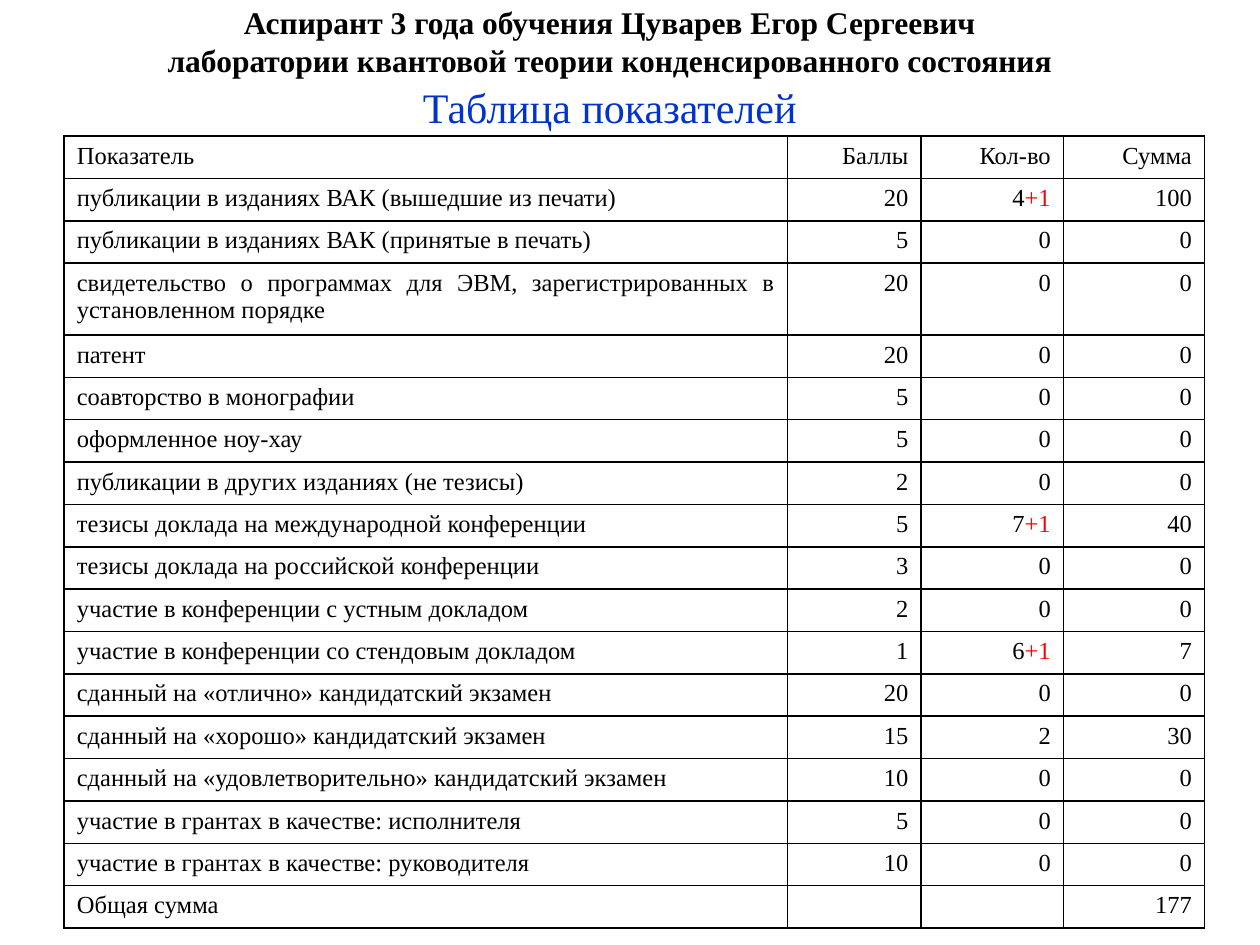
from lxml import etree
from pptx import Presentation
from pptx.dml.color import RGBColor
from pptx.enum.text import MSO_ANCHOR, PP_ALIGN
from pptx.oxml.ns import qn
from pptx.util import Inches, Pt

CENTER, RIGHT, JUSTIFY = PP_ALIGN.CENTER, PP_ALIGN.RIGHT, PP_ALIGN.JUSTIFY
MIDDLE = MSO_ANCHOR.MIDDLE
TITLE_ONLY = 5

FONT = "Times New Roman"
BLACK, BLUE, RED = "000000", "0033CC", "FF0000"
TABLE_SIZE = 14

COLUMN_WIDTHS = [5.74, 1.06, 1.13, 1.12]
TABLE_HEIGHT = 6.29
TALL_ROW, TALL_HEIGHT = 3, 0.57

ROWS = [
    ("Показатель", "Баллы", "Кол-во", "Сумма"),
    ("публикации в изданиях ВАК (вышедшие из печати)", "20", "4+1", "100"),
    ("публикации в изданиях ВАК (принятые в печать)", "5", "0", "0"),
    ("свидетельство о программах для ЭВМ, зарегистрированных в установленном порядке",
     "20", "0", "0"),
    ("патент", "20", "0", "0"),
    ("соавторство в монографии", "5", "0", "0"),
    ("оформленное ноу-хау", "5", "0", "0"),
    ("публикации в других изданиях (не тезисы)", "2", "0", "0"),
    ("тезисы доклада на международной конференции", "5", "7+1", "40"),
    ("тезисы доклада на российской конференции", "3", "0", "0"),
    ("участие в конференции с устным докладом", "2", "0", "0"),
    ("участие в конференции со стендовым докладом", "1", "6+1", "7"),
    ("сданный на «отлично» кандидатский экзамен", "20", "0", "0"),
    ("сданный на «хорошо» кандидатский экзамен", "15", "2", "30"),
    ("сданный на «удовлетворительно» кандидатский экзамен", "10", "0", "0"),
    ("участие в грантах в качестве: исполнителя", "5", "0", "0"),
    ("участие в грантах в качестве: руководителя", "10", "0", "0"),
    ("Общая сумма", "", "", "177"),
]


def color(value):
    return RGBColor.from_string(value)


def add_text(paragraph, text, size, fill=BLACK, bold=False, align=CENTER):
    """Append formatted runs to the paragraph, one for each line of the text."""
    paragraph.alignment = align
    for index, line in enumerate(text.split("\n")):
        if index:
            paragraph.add_line_break()
        run = paragraph.add_run()
        run.text = line
        run.font.name = FONT
        run.font.size = Pt(size)
        run.font.bold = bold
        run.font.color.rgb = color(fill)


def add_title(slide):
    title = slide.shapes.title
    title.left, title.top = Inches(0.59), Inches(-0.03)
    title.width, title.height = Inches(8.5), Inches(0.71)
    frame = title.text_frame
    frame.word_wrap = True
    frame.vertical_anchor = MIDDLE
    paragraph = frame.paragraphs[0]
    paragraph.line_spacing = 1.0
    add_text(
        paragraph,
        "Аспирант 3 года обучения Цуварев Егор Сергеевич\n"
        "лаборатории квантовой теории конденсированного состояния",
        size=18, bold=True)


def add_subtitle(slide):
    box = slide.shapes.add_textbox(Inches(1.34), Inches(0.6), Inches(7), Inches(0.47))
    box.text_frame.word_wrap = True
    paragraph = box.text_frame.paragraphs[0]
    paragraph.space_before = Pt(2)
    add_text(paragraph, "Таблица показателей", size=24, fill=BLUE)


def set_borders(cell):
    properties = cell._tc.get_or_add_tcPr()
    for side in ("a:lnL", "a:lnR", "a:lnT", "a:lnB"):
        line = etree.SubElement(properties, qn(side), w=str(Pt(1)))
        fill = etree.SubElement(line, qn("a:solidFill"))
        etree.SubElement(fill, qn("a:srgbClr"), val=BLACK)


def fill_cell(cell, text, align):
    """Write the cell, with any part from a plus sign onwards in red."""
    set_borders(cell)
    cell.fill.background()
    cell.margin_left = cell.margin_right = Inches(0.1)
    cell.margin_top = cell.margin_bottom = Inches(0.05)
    paragraph = cell.text_frame.paragraphs[0]
    if not text:
        # The end mark sets the height of an empty cell.
        etree.SubElement(paragraph._p, qn("a:endParaRPr"), sz=str(TABLE_SIZE * 100))
        return
    count, plus, extra = text.partition("+")
    add_text(paragraph, count, size=TABLE_SIZE, align=align)
    if plus:
        add_text(paragraph, plus + extra, size=TABLE_SIZE, fill=RED, align=align)


def add_score_table(slide):
    table = slide.shapes.add_table(
        len(ROWS), len(COLUMN_WIDTHS), Inches(0.51), Inches(1.08),
        Inches(sum(COLUMN_WIDTHS)), Inches(TABLE_HEIGHT)).table
    table.first_row = table.horz_banding = False
    for column, width in zip(table.columns, COLUMN_WIDTHS):
        column.width = Inches(width)
    row_height = (TABLE_HEIGHT - TALL_HEIGHT) / (len(ROWS) - 1)
    for row_index, values in enumerate(ROWS):
        height = TALL_HEIGHT if row_index == TALL_ROW else row_height
        table.rows[row_index].height = Inches(height)
        for column_index, text in enumerate(values):
            align = RIGHT if column_index else JUSTIFY
            fill_cell(table.cell(row_index, column_index), text, align)


def main():
    presentation = Presentation()
    presentation.slide_width = Inches(10)
    presentation.slide_height = Inches(7.5)
    slide = presentation.slides.add_slide(presentation.slide_layouts[TITLE_ONLY])
    add_subtitle(slide)
    add_score_table(slide)
    add_title(slide)
    presentation.save("out.pptx")


if __name__ == "__main__":
    main()
